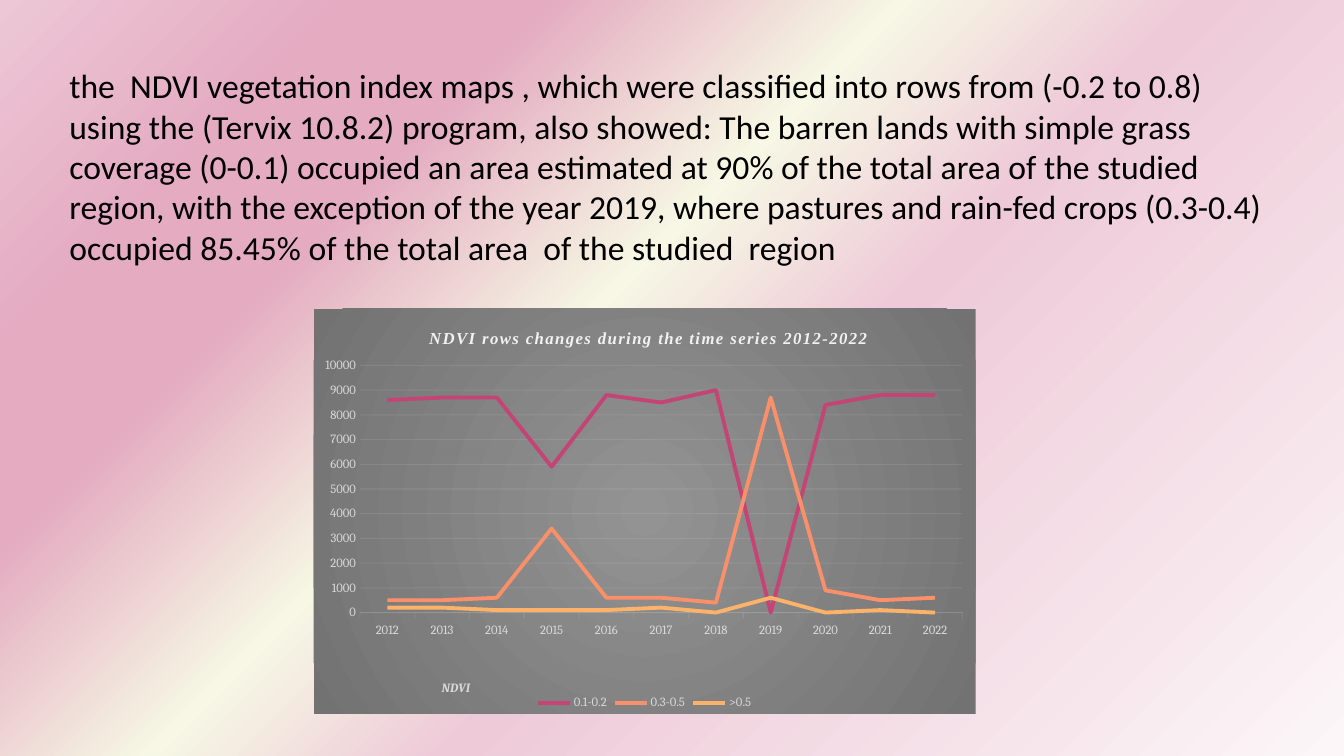
"""Builds a slide on NDVI class changes from 2012 to 2022."""
from dataclasses import dataclass

from pptx import Presentation
from pptx.chart.data import CategoryChartData
from pptx.dml.color import RGBColor
from pptx.enum.chart import XL_CHART_TYPE, XL_LEGEND_POSITION, XL_TICK_MARK
from pptx.enum.text import PP_ALIGN
from pptx.oxml import parse_xml
from pptx.oxml.ns import nsdecls, qn
from pptx.util import Pt

LINE = XL_CHART_TYPE.LINE
BOTTOM = XL_LEGEND_POSITION.BOTTOM
TICK_NONE, TICK_OUT = XL_TICK_MARK.NONE, XL_TICK_MARK.OUTSIDE
LEFT = PP_ALIGN.LEFT


@dataclass(frozen=True)
class Theme:
    text: str = "000000"
    label: str = "D9D9D9"
    light: str = "F2F2F2"
    series: tuple = ("C44475", "FA906A", "FCB268")
    backdrop: tuple = ((0, "FCF6F8"), (43, "EECAD8"), (57, "F6F7E4"),
                       (74, "E4ABC1"), (83, "E4ABC1"), (100, "EDC7D6"))
    panel: tuple = ((0, "939393"), (100, "727272"))
    body_font: str = "Calibri"
    chart_font: str = "Cambria"
    title_font: str = "Times New Roman"
    body_size: int = 24
    title_size: int = 12
    label_size: int = 9


BODY = ("the  NDVI vegetation index maps , which were classified into rows from "
        "(-0.2 to 0.8) using the (Tervix 10.8.2) program, also showed: The barren "
        "lands with simple grass coverage (0-0.1) occupied an area estimated at 90% "
        "of the total area of the studied  region, with the exception of the year "
        "2019, where pastures and rain-fed crops (0.3-0.4) occupied 85.45% of the "
        "total area  of the studied  region")
CHART_TITLE = "NDVI rows changes during the time series 2012-2022"
YEARS = [str(year) for year in range(2012, 2023)]
AREAS = {
    "0.1-0.2": (8600, 8700, 8700, 5900, 8800, 8500, 9000, 0, 8400, 8800, 8800),
    "0.3-0.5": (500, 500, 600, 3400, 600, 600, 400, 8700, 900, 500, 600),
    ">0.5": (200, 200, 100, 100, 100, 200, 0, 600, 0, 100, 0),
}


def gradient(stops, direction):
    """Return gradient fill XML for percentage stops."""
    gs = "".join(f'<a:gs pos="{pos * 1000}"><a:srgbClr val="{color}"/></a:gs>'
                 for pos, color in stops)
    return f'<a:gradFill rotWithShape="1"><a:gsLst>{gs}</a:gsLst>{direction}</a:gradFill>'


def layout(x, y, size="", target=""):
    """Return a manual chart layout in fractions of the chart."""
    return parse_xml(
        f'<c:layout {nsdecls("c")}><c:manualLayout>{target}<c:xMode val="edge"/>'
        f'<c:yMode val="edge"/><c:x val="{x}"/><c:y val="{y}"/>{size}'
        '</c:manualLayout></c:layout>')


def place(element, new_layout, after=None):
    """Give a chart element a manual layout."""
    for old in element.findall(qn("c:layout")):
        element.remove(old)
    if after is None:
        element.insert(0, new_layout)
    else:
        element.find(qn(after)).addnext(new_layout)


class Deck:
    """Holds the theme and the current slide."""

    def __init__(self, prs, theme):
        self.theme = theme
        self.s = prs.slides.add_slide(prs.slide_layouts[6])

    def font(self, font, name, size, color, bold=False, italic=False):
        """Style one font."""
        font.name, font.size = name, Pt(size)
        font.bold, font.italic = bold, italic
        font.color.rgb = RGBColor.from_string(color)

    def background(self):
        """Fill the slide with the diagonal gradient."""
        fill = gradient(self.theme.backdrop, '<a:lin ang="13500000" scaled="0"/>')
        bg = parse_xml(f'<p:bg {nsdecls("p", "a")}><p:bgPr>{fill}<a:effectLst/>'
                       '</p:bgPr></p:bg>')
        self.s.element.cSld.insert(0, bg)

    def text(self, text, x, y, w, h):
        """Add a wrapped paragraph."""
        tf = self.s.shapes.add_textbox(Pt(x), Pt(y), Pt(w), Pt(h)).text_frame
        tf.word_wrap = True
        p = tf.paragraphs[0]
        p.text, p.alignment = text, LEFT
        self.font(p.font, self.theme.body_font, self.theme.body_size, self.theme.text)

    def faint(self, line):
        """Make a thin line that is nearly transparent."""
        line.width = Pt(0.75)
        line.color.rgb = RGBColor.from_string(self.theme.light)
        color = line._get_or_add_ln().find(".//" + qn("a:srgbClr"))
        color.append(parse_xml(f'<a:alpha {nsdecls("a")} val="10000"/>'))

    def title(self, title, text, name, size, color, x, y, spacing=0):
        """Write a bold italic chart or axis title at a fixed place."""
        p = title.text_frame.paragraphs[0]
        r = p.add_run()
        r.text = text
        self.font(r.font, name, size, color, True, True)
        r._r.get_or_add_rPr().set("spc", str(spacing))
        place(title._element, layout(x, y), "c:tx")

    def line_chart(self, title, cats, series, x, y, w, h):
        """Add the line chart on its grey panel."""
        t = self.theme
        data = CategoryChartData(number_format="0")
        data.categories = cats
        for name, values in series.items():
            data.add_series(name, values)
        chart = self.s.shapes.add_chart(LINE, Pt(x), Pt(y), Pt(w), Pt(h), data).chart
        self.font(chart.font, t.chart_font, t.label_size, t.label)
        fill = gradient(t.panel, '<a:path path="circle"><a:fillToRect l="50000" '
                        't="50000" r="50000" b="50000"/></a:path>')
        space = chart._chartSpace
        space.chart.addnext(parse_xml(
            f'<c:spPr {nsdecls("c", "a")}>{fill}<a:ln><a:noFill/></a:ln></c:spPr>'))
        place(space.chart.plotArea, layout(
            0.07, 0.14, '<c:w val="0.91"/><c:h val="0.61"/>',
            '<c:layoutTarget val="inner"/>'))
        chart.has_title = True
        self.title(chart.chart_title, title, t.title_font, t.title_size, t.light,
                   0.17, 0.04, 100)
        chart.has_legend = True
        chart.legend.position = BOTTOM
        chart.legend.include_in_layout = False
        self.font(chart.legend.font, t.chart_font, t.label_size, t.label)
        for axis in (chart.category_axis, chart.value_axis):
            axis.minor_tick_mark = TICK_NONE
            self.font(axis.tick_labels.font, t.chart_font, t.label_size, t.label)
        years, areas = chart.category_axis, chart.value_axis
        years.major_tick_mark, areas.major_tick_mark = TICK_OUT, TICK_NONE
        self.faint(years.format.line)
        self.title(years.axis_title, "NDVI", t.chart_font, t.label_size, t.label,
                   0.19, 0.91)
        areas.minimum_scale, areas.maximum_scale, areas.major_unit = 0, 10000, 1000
        areas.format.line.fill.background()
        self.faint(areas.major_gridlines.format.line)
        plot = chart.plots[0]
        plot.vary_by_categories = False
        for ser, color in zip(plot.series, t.series):
            ser.smooth = False
            ser.format.line.width = Pt(2.75)
            ser.format.line.color.rgb = RGBColor.from_string(color)


def main():
    """Build and save the slide."""
    prs = Presentation()
    prs.slide_width, prs.slide_height = Pt(960), Pt(540)
    deck = Deck(prs, Theme())
    deck.background()
    deck.text(BODY, 42.5, 43, 867, 153)
    deck.line_chart(CHART_TITLE, YEARS, AREAS, 224, 220.5, 473, 289.5)
    prs.save("out.pptx")


if __name__ == "__main__":
    main()
